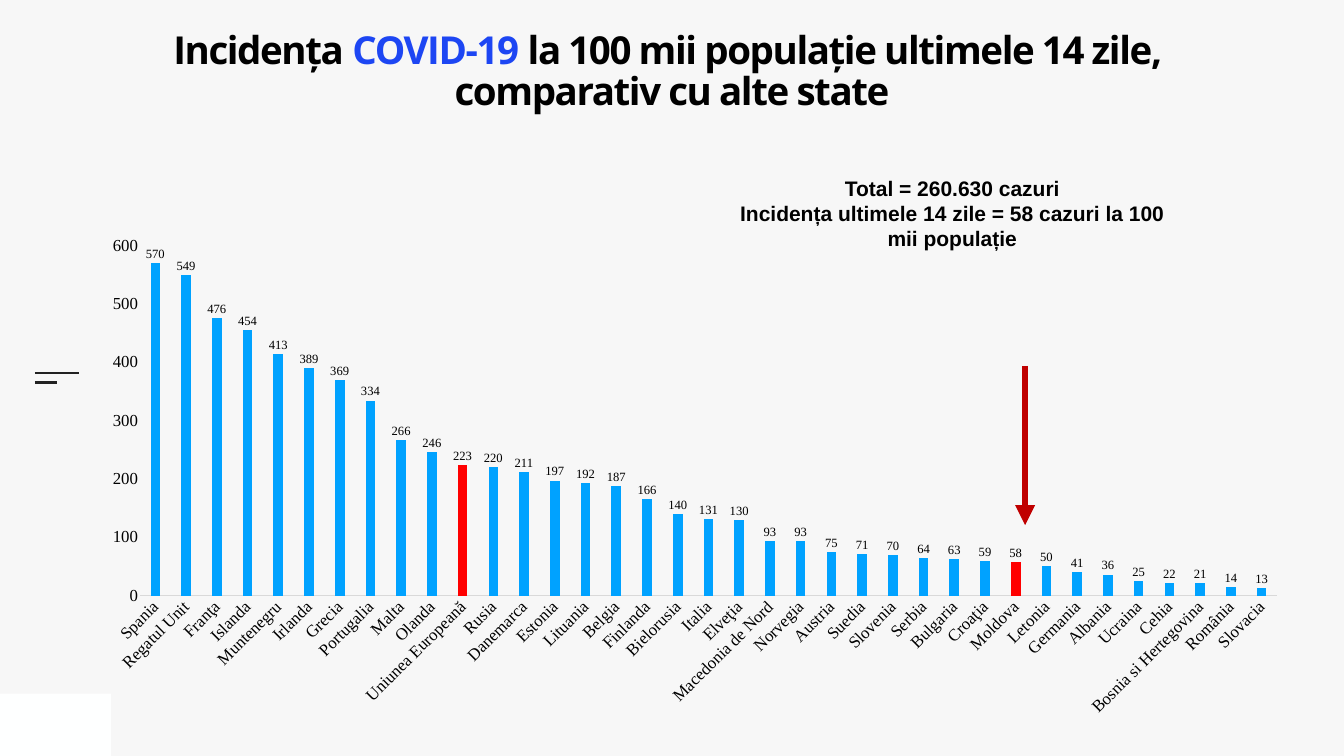
from dataclasses import dataclass
from typing import Any

from lxml.etree import SubElement
from pptx import Presentation
from pptx.chart.data import CategoryChartData
from pptx.dml.color import RGBColor
from pptx.enum.chart import XL_CHART_TYPE, XL_LABEL_POSITION, XL_TICK_MARK
from pptx.enum.shapes import MSO_CONNECTOR, MSO_SHAPE
from pptx.enum.text import MSO_ANCHOR, PP_ALIGN
from pptx.oxml import parse_xml
from pptx.oxml.ns import nsdecls, qn
from pptx.util import Pt

COLORS = {
    "background": "F7F7F7", "corner": "FEFFFF", "rule": "222222",
    "text": "000000", "accent": "1D46F3", "axis": "D9D9D9",
    "bar": "00A2FF", "highlight": "FF0000", "arrow": "C00000",
}

INCIDENCE = {
    "Spania": 570, "Regatul Unit": 549, "Franţa": 476, "Islanda": 454,
    "Muntenegru": 413, "Irlanda": 389, "Grecia": 369, "Portugalia": 334,
    "Malta": 266, "Olanda": 246, "Uniunea Europeană": 223, "Rusia": 220,
    "Danemarca": 211, "Estonia": 197, "Lituania": 192, "Belgia": 187,
    "Finlanda": 166, "Bielorusia": 140, "Italia": 131, "Elveţia": 130,
    "Macedonia de Nord": 93, "Norvegia": 93, "Austria": 75, "Suedia": 71,
    "Slovenia": 70, "Serbia": 64, "Bulgaria": 63, "Croaţia": 59,
    "Moldova": 58, "Letonia": 50, "Germania": 41, "Albania": 36,
    "Ucraina": 25, "Cehia": 22, "Bosnia si Hertegovina": 21,
    "România": 14, "Slovacia": 13,
}
HIGHLIGHTED = ("Uniunea Europeană", "Moldova")


@dataclass
class Line:
    start: tuple[float, float]
    end: tuple[float, float]
    color: str
    width: float
    arrow: bool = False


@dataclass
class Run:
    text: str
    color: str = "text"


@dataclass
class TextBox:
    box: tuple[float, float, float, float]
    paragraphs: list[list[Run]]
    font: dict[str, Any]
    inset: float = 0
    anchor: MSO_ANCHOR = MSO_ANCHOR.TOP
    line_spacing: float = 1.0
    tracking: float = 0


LINES = [
    Line((49.7, 533.5), (113, 533.5), "rule", 3),
    Line((49.7, 546.5), (81.4, 546.5), "rule", 3),
    Line((1464.5, 522.7), (1464.5, 750.2), "arrow", 9.5, arrow=True),
]

TEXTS = [
    TextBox((0, 44, 1920, 114),
            [[Run("Incidența "), Run("COVID-19", "accent"),
              Run(" la 100 mii populație ultimele 14 zile, \vcomparativ cu alte state")]],
            {"name": "Open Sans", "size": Pt(55), "bold": True},
            line_spacing=0.9, tracking=-2),
    TextBox((1045.4, 246.2, 630, 117.4),
            [[Run("Total = 260.630 cazuri")],
             [Run("Incidența ultimele 14 zile = 58 cazuri la 100 mii populație")]],
            {"name": "Arial", "size": Pt(30), "bold": True},
            inset=4, anchor=MSO_ANCHOR.MIDDLE),
]


def rgb(name: str) -> RGBColor:
    return RGBColor.from_string(COLORS[name])


def apply(target: Any, values: dict[str, Any]) -> None:
    for key, value in values.items():
        setattr(target, key, value)


def paint(fill: Any, color: str) -> None:
    fill.solid()
    fill.fore_color.rgb = rgb(color)


def style_font(font: Any, values: dict[str, Any], color: str = "text") -> None:
    apply(font, values)
    font.color.rgb = rgb(color)


def add_line(s: Any, line: Line) -> None:
    points = [Pt(v) for v in (*line.start, *line.end)]
    c = s.shapes.add_connector(MSO_CONNECTOR.STRAIGHT, *points)
    c.line.width = Pt(line.width)
    c.line.color.rgb = rgb(line.color)
    if line.arrow:
        SubElement(c.line._get_or_add_ln(), qn("a:tailEnd"), type="triangle")
    SubElement(c._element.spPr, qn("a:effectLst"))


def add_text(s: Any, text: TextBox) -> None:
    tf = s.shapes.add_textbox(*map(Pt, text.box)).text_frame
    margins = ("margin_left", "margin_top", "margin_right", "margin_bottom")
    apply(tf, dict.fromkeys(margins, Pt(text.inset)))
    apply(tf, {"word_wrap": True, "vertical_anchor": text.anchor})
    for i, runs in enumerate(text.paragraphs):
        p = tf.add_paragraph() if i else tf.paragraphs[0]
        apply(p, {"alignment": PP_ALIGN.CENTER, "line_spacing": text.line_spacing})
        for run in runs:
            for j, part in enumerate(run.text.split("\v")):
                if j:
                    p.add_line_break()
                r = p.add_run()
                r.text = part
                style_font(r.font, text.font, run.color)
                if text.tracking:
                    r.font._element.set("spc", str(round(text.tracking * 100)))


def set_plot_area(chart: Any, x: float, y: float, w: float, h: float) -> None:
    """Fix the inner plot area, as fractions of the chart's size."""
    area = chart._chartSpace.chart.plotArea
    for old in area.findall(qn("c:layout")):
        area.remove(old)
    sizes = "".join(f'<c:{k} val="{v}"/>' for k, v in zip("xywh", (x, y, w, h)))
    area.insert(0, parse_xml(
        f'<c:layout {nsdecls("c")}><c:manualLayout><c:layoutTarget val="inner"/>'
        f'<c:xMode val="edge"/><c:yMode val="edge"/>{sizes}'
        "</c:manualLayout></c:layout>"))


def add_incidence_chart(s: Any) -> None:
    data = CategoryChartData(number_format="0")
    data.categories = list(INCIDENCE)
    data.add_series("Series 1", list(INCIDENCE.values()))
    chart = s.shapes.add_chart(XL_CHART_TYPE.COLUMN_CLUSTERED, Pt(127.4), Pt(321.8),
                               Pt(1728), Pt(715), data).chart
    apply(chart, {"has_legend": False, "has_title": False})
    serif = {"name": "Times New Roman", "size": Pt(24)}
    style_font(chart.font, serif)
    set_plot_area(chart, 0.042, 0.04, 0.94, 0.7)

    cat, val = chart.category_axis, chart.value_axis
    for axis in (cat, val):
        apply(axis, {"has_major_gridlines": False,
                     "major_tick_mark": XL_TICK_MARK.NONE,
                     "minor_tick_mark": XL_TICK_MARK.NONE})
        style_font(axis.tick_labels.font, serif)
    cat.format.line.width = Pt(0.75)
    cat.format.line.color.rgb = rgb("axis")
    cat._element.txPr.find(qn("a:bodyPr")).set("rot", str(-45 * 60000))
    apply(val, {"minimum_scale": 0, "maximum_scale": 600, "major_unit": 100})
    apply(val.tick_labels, {"number_format": "0", "number_format_is_linked": False})
    val.format.line.fill.background()

    plot = chart.plots[0]
    apply(plot, {"gap_width": 219, "overlap": -27, "vary_by_categories": False})
    series = plot.series[0]
    paint(series.format.fill, "bar")
    for i, country in enumerate(INCIDENCE):
        if country in HIGHLIGHTED:
            paint(series.points[i].format.fill, "highlight")
    labels = series.data_labels
    apply(labels, {"show_value": True, "number_format": "0",
                   "number_format_is_linked": False,
                   "position": XL_LABEL_POSITION.OUTSIDE_END})
    style_font(labels.font, serif | {"size": Pt(18)})


def main() -> None:
    prs = Presentation()
    apply(prs, {"slide_width": Pt(1920), "slide_height": Pt(1080)})
    s = prs.slides.add_slide(prs.slide_layouts[6])
    paint(s.background.fill, "background")

    corner = s.shapes.add_shape(MSO_SHAPE.RECTANGLE, 0, Pt(991), Pt(158.4), Pt(89))
    corner.shadow.inherit = False
    paint(corner.fill, "corner")
    corner.line.fill.background()

    add_incidence_chart(s)
    for line in LINES:
        add_line(s, line)
    for text in TEXTS:
        add_text(s, text)
    prs.save("out.pptx")


if __name__ == "__main__":
    main()
